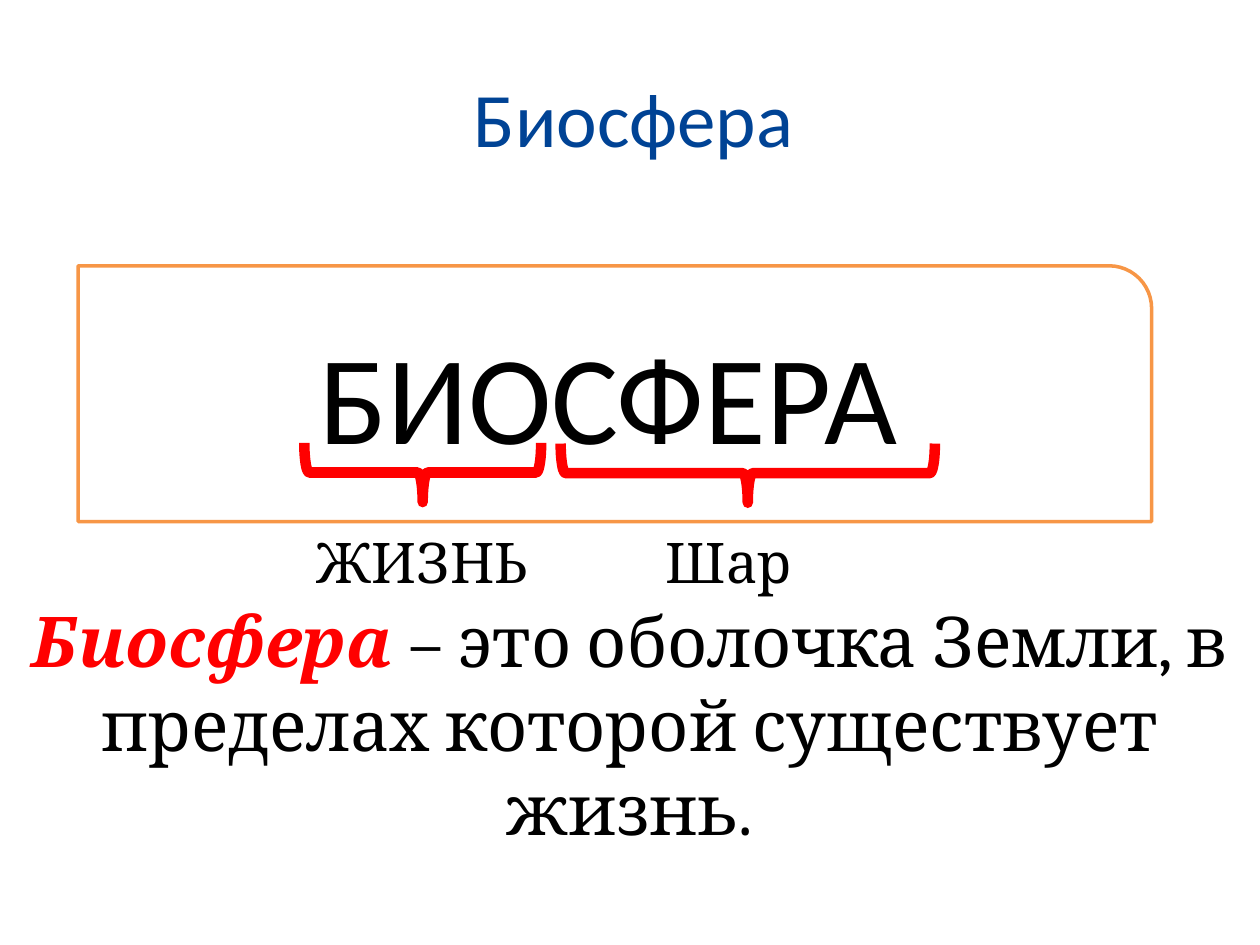
from pptx import Presentation
from pptx.dml.color import RGBColor
from pptx.enum.shapes import MSO_SHAPE
from pptx.enum.text import MSO_ANCHOR, MSO_AUTO_SIZE, PP_ALIGN
from pptx.util import Pt

SCALE = 9144  # EMU in one px, 100 px to the inch
TITLE_ONLY = 5
CENTER = PP_ALIGN.CENTER
MIDDLE, TOP = MSO_ANCHOR.MIDDLE, MSO_ANCHOR.TOP
GROW = MSO_AUTO_SIZE.SHAPE_TO_FIT_TEXT
CARD, BRACE = MSO_SHAPE.ROUND_1_RECTANGLE, MSO_SHAPE.LEFT_BRACE

COLORS = {
    "title": "004395",
    "text": "000000",
    "accent": "FF0000",
    "card": "FFFFFF",
    "border": "F79646",
}
HEADING = {"name": "Calibri"}
BODY = {"name": "Cambria"}
TERM = {**BODY, "bold": True, "italic": True}


def color(name):
    return RGBColor.from_string(COLORS[name])


def emu(*lengths):
    return [length * SCALE for length in lengths]


class SlideBuilder:
    """Holds the current slide and draws each kind of element on it."""

    def __init__(self, presentation):
        self.slide = presentation.slides.add_slide(presentation.slide_layouts[TITLE_ONLY])

    def fill_text(self, shape, runs, size, anchor):
        """Fill a shape with one centred paragraph of (text, format, colour) runs."""
        frame = shape.text_frame
        frame.word_wrap = True
        frame.vertical_anchor = anchor
        paragraph = frame.paragraphs[0]
        paragraph.alignment = CENTER
        for text, style, color_name in runs:
            run = paragraph.add_run()
            run.text = text
            for attribute, value in {**style, "size": Pt(size)}.items():
                setattr(run.font, attribute, value)
            run.font.color.rgb = color(color_name)
        return paragraph

    def title(self, text, box, size, indent):
        shape = self.slide.shapes.title
        shape.left, shape.top, shape.width, shape.height = emu(*box)
        paragraph = self.fill_text(shape, [(text, HEADING, "title")], size, MIDDLE)
        properties = paragraph._p.get_or_add_pPr()
        properties.set("marL", str(indent * SCALE))
        properties.set("indent", "0")

    def text(self, runs, box, size):
        shape = self.slide.shapes.add_textbox(*emu(*box))
        self.fill_text(shape, runs, size, TOP)
        shape.text_frame.auto_size = GROW

    def outline(self, kind, box, line_color, line_width):
        shape = self.slide.shapes.add_shape(kind, *emu(*box))
        shape.shadow.inherit = False
        shape.fill.background()
        shape.line.color.rgb = color(line_color)
        shape.line.width = Pt(line_width)
        return shape

    def card(self, text, box, size):
        shape = self.outline(CARD, box, "border", 2)
        shape.fill.solid()
        shape.fill.fore_color.rgb = color("card")
        self.fill_text(shape, [(text, HEADING, "text")], size, MIDDLE)

    def brace_below(self, left, top, width, height):
        """Draw a brace that points down and spans the given box."""
        turned_left = left + (width - height) // 2
        turned_top = top + (height - width) // 2
        box = (turned_left, turned_top, height, width)
        self.outline(BRACE, box, "accent", 6).rotation = 270


def main():
    presentation = Presentation()
    presentation.slide_width, presentation.slide_height = emu(1000, 750)
    builder = SlideBuilder(presentation)
    builder.title("Биосфера", (50, 30, 900, 125), 44, 6)
    builder.card("БИОСФЕРА", (62, 211, 852, 203), 72)

    word_parts = [("ЖИЗНЬ", 234, 242, 188), ("Шар", 477, 445, 297)]
    for meaning, label_left, brace_left, brace_width in word_parts:
        builder.brace_below(brace_left, 352, brace_width, 47)
        builder.text([(meaning, BODY, "text")], (label_left, 414, 203, 64), 32)

    definition = [
        ("Биосфера", TERM, "accent"),
        (" – это оболочка Земли, в пределах которой существует жизнь.", BODY, "text"),
    ]
    builder.text(definition, (0, 469, 1000, 145), 40)
    presentation.save("out.pptx")


if __name__ == "__main__":
    main()
